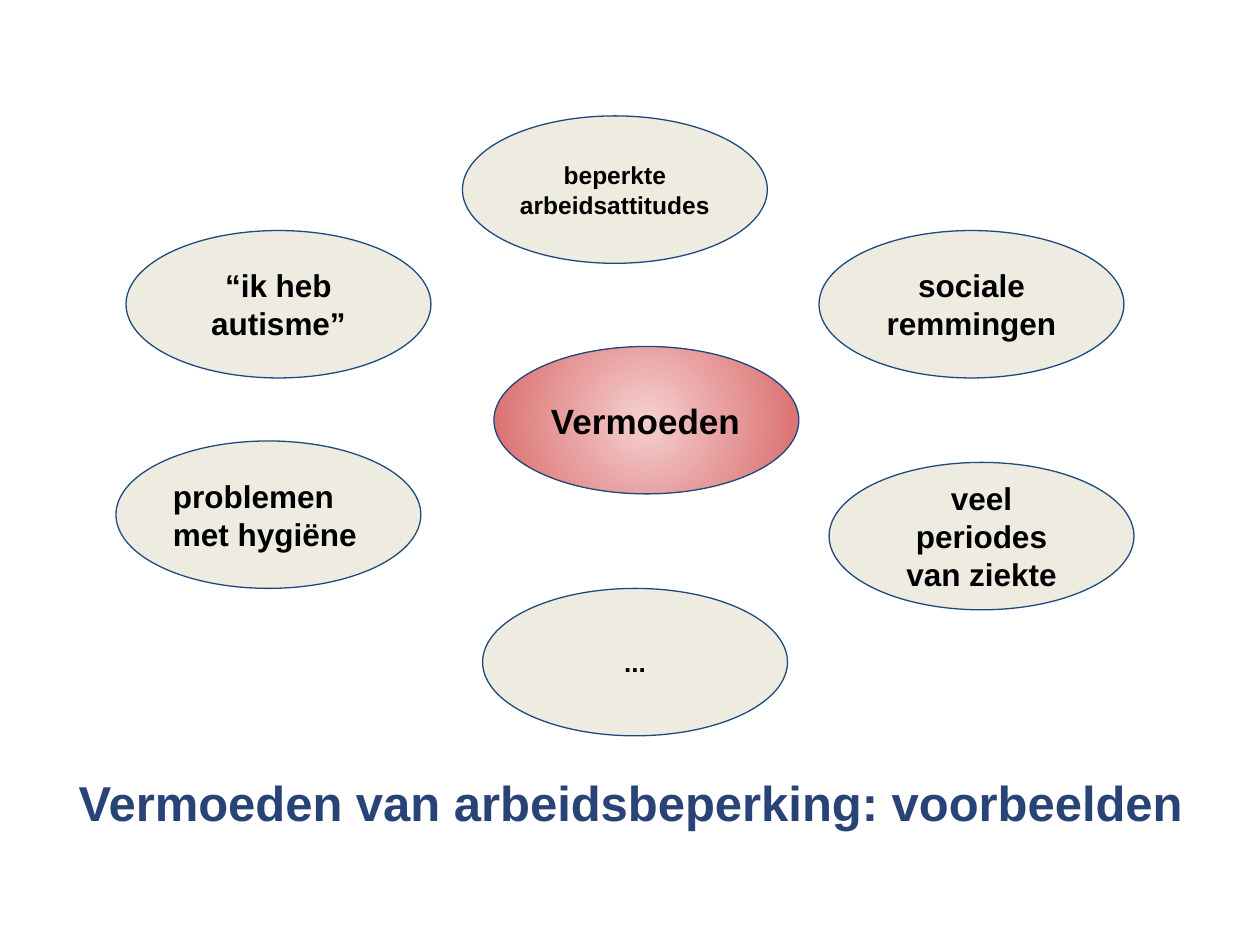
from pptx import Presentation
from pptx.dml.color import RGBColor
from pptx.enum.shapes import MSO_SHAPE
from pptx.enum.text import MSO_ANCHOR, PP_ALIGN
from pptx.oxml import parse_xml
from pptx.oxml.ns import nsdecls, qn
from pptx.util import Inches, Pt

TITLE = "Vermoeden van arbeidsbeperking: voorbeelden"
CENTRE = ("Vermoeden", 3.92, 2.75, 20, PP_ALIGN.LEFT)
EXAMPLES = [
    ("“ik heb autisme”", 1, 1.83, 18, PP_ALIGN.CENTER),
    ("beperkte arbeidsattitudes", 3.67, 0.92, 14, PP_ALIGN.CENTER),
    ("sociale remmingen", 6.5, 1.83, 18, PP_ALIGN.CENTER),
    ("veel periodes van ziekte", 6.58, 3.67, 18, PP_ALIGN.CENTER),
    ("problemen met hygiëne", 0.92, 3.5, 18, PP_ALIGN.LEFT),
    ("...", 3.83, 4.67, 15, PP_ALIGN.CENTER),
]
OVAL_SIZE = (2.42, 1.17)
GLOW = ("F5D0D0", "D96868")
SAND, NAVY, TITLE_BLUE, BLACK = "EEECE1", "1F497D", "294376", "000000"


def colour(value):
    """Turn a hex string into a colour."""
    return RGBColor.from_string(value)


def write(shape, text, size, ink, align, anchor, inset):
    """Put one bold paragraph in a shape."""
    frame = shape.text_frame
    frame.text = text
    layout = {
        "word_wrap": True,
        "vertical_anchor": anchor,
        "margin_left": Inches(0.1),
        "margin_right": Inches(0.1),
        "margin_top": Inches(inset),
        "margin_bottom": Inches(inset),
    }
    for name, value in layout.items():
        setattr(frame, name, value)
    para = frame.paragraphs[0]
    para.alignment = align
    font = para.runs[0].font
    for name, value in {"name": "Arial", "size": Pt(size), "bold": True}.items():
        setattr(font, name, value)
    font.color.rgb = colour(ink)


def add_oval(page, text, left, top, size, align):
    """Draw one outlined sand-coloured oval with its label."""
    place = [Inches(n) for n in (left, top, *OVAL_SIZE)]
    oval = page.shapes.add_shape(MSO_SHAPE.OVAL, *place)
    oval.shadow.inherit = False
    oval.fill.solid()
    oval.fill.fore_color.rgb = colour(SAND)
    oval.line.color.rgb = colour(NAVY)
    oval.line.width = Pt(0.75)
    write(oval, text, size, BLACK, align, MSO_ANCHOR.MIDDLE, 0.1)
    return oval


def add_glow(shape):
    """Fill a shape with a gradient that spreads from its centre."""
    shape.fill.gradient()
    for stop, value in zip(shape.fill.gradient_stops, GLOW):
        stop.color.rgb = colour(value)
    gradient = shape.element.spPr.find(qn("a:gradFill"))
    radial = parse_xml(
        f'<a:path {nsdecls("a")} path="circle">'
        '<a:fillToRect l="50000" t="50000" r="50000" b="50000"/></a:path>'
    )
    gradient.replace(gradient.find(qn("a:lin")), radial)


def main():
    """Build the slide and save it."""
    deck = Presentation()
    deck.slide_width, deck.slide_height = Inches(10), Inches(7.5)
    page = deck.slides.add_slide(deck.slide_layouts[5])

    add_glow(add_oval(page, *CENTRE))
    for example in EXAMPLES:
        add_oval(page, *example)

    title = page.shapes.title
    place = {"left": 0.45, "top": 6.03, "width": 9.11, "height": 0.62}
    for name, value in place.items():
        setattr(title, name, Inches(value))
    write(title, TITLE, 28, TITLE_BLUE, PP_ALIGN.CENTER, MSO_ANCHOR.BOTTOM, 0.05)

    deck.save("out.pptx")


if __name__ == "__main__":
    main()
